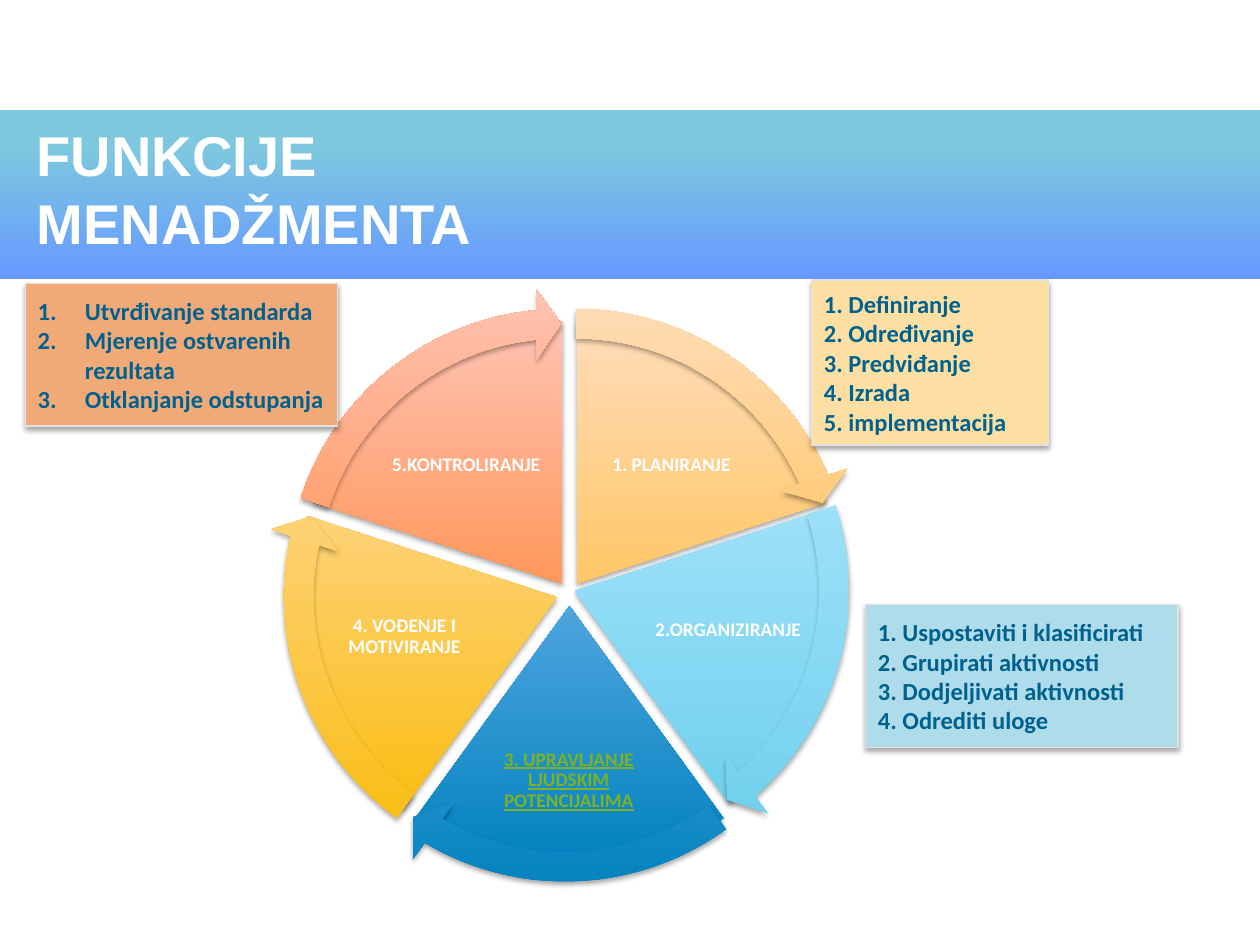
from lxml import etree
from pptx import Presentation
from pptx import util as u
from pptx.dml import color as c
from pptx.enum import shapes, text
from pptx.oxml import ns

THEME = {
    "heading_font": "Arial", "body_font": "Calibri",
    "heading_size": 32, "label_size": 11, "list_size": 14,
    "white": "FFFFFF", "ink": "00618E", "accent": "7EB220", "border": "E1E1E1",
    "band": ((0.21, "7DC8DF"), (1, "6699FF")),
}

HEADING = "FUNKCIJE MENADŽMENTA"
HEADING_BOX = (13.7, 65.5, 360.7, 44.6)
BAND_BOX = (0, 62.8, 720, 96.8)

PIE_SIZE, ARROW_SIZE = 299.5, 336.2
FUNCTIONS = [
    {"label": "1. PLANIRANJE", "colours": ("FFB112", "FFDCBA"), "pie": (180, 183.6),
     "arrow": (161.3, 164.9), "label_box": (335.5, 234, 96.5, 64.1)},
    {"label": "2.ORGANIZIRANJE", "colours": ("69CDEC", "BAEBFF"), "pie": (178.6, 187.9),
     "arrow": (160.6, 169.2), "label_box": (371.5, 324.7, 89.3, 71.3)},
    {"label": "3. UPRAVLJANJE LJUDSKIM POTENCIJALIMA", "colours": ("0081BE", "9FC9FF"),
     "pie": (175.7, 196.6), "arrow": (154.8, 179.3),
     "label_box": (282.2, 406.8, 85.7, 78.5), "marked": True},
    {"label": "4. VOĐENJE I MOTIVIRANJE", "colours": ("FAB900", "FFE0BA"), "pie": (168.5, 191.5),
     "arrow": (150.5, 172.8), "label_box": (186.5, 328.3, 89.3, 71.3)},
    {"label": "5.KONTROLIRANJE", "colours": ("FF6D04", "FFC2B2"), "pie": (171.4, 183.6),
     "arrow": (152.6, 164.9), "label_box": (218.2, 234, 96.5, 64.1)},
]

TASKS = [
    {"box": (463.7, 160, 135.4, 94.3), "fill": "FDDFA3", "numbered": False,
     "lines": ["1. Definiranje", "2. Određivanje", "3. Predviđanje", "4. Izrada",
               "5. implementacija"]},
    {"box": (494.6, 345.6, 178.6, 81.4), "fill": "AEDCEB", "numbered": False,
     "lines": ["1. Uspostaviti i klasificirati", "2. Grupirati aktivnosti",
               "3. Dodjeljivati aktivnosti", "4. Odrediti uloge"]},
    {"box": (14.4, 162, 178.6, 81.4), "fill": "F1AA77", "numbered": True,
     "lines": ["Utvrđivanje standarda", "Mjerenje ostvarenih rezultata",
               "Otklanjanje odstupanja"]},
]


def rgb(value):
    return c.RGBColor.from_string(value)


def points(box):
    return [u.Pt(length) for length in box]


def write(shape, lines, font=THEME["body_font"], size=THEME["label_size"],
          colour=THEME["white"], align=text.PP_ALIGN.LEFT, anchor=text.MSO_ANCHOR.MIDDLE,
          underline=None, spacing=None, inset=None, numbered=False):
    frame = shape.text_frame
    frame.word_wrap = True
    frame.auto_size = text.MSO_AUTO_SIZE.NONE
    frame.vertical_anchor = anchor
    if inset is not None:
        frame.margin_left = frame.margin_right = u.Pt(inset)
        frame.margin_top = frame.margin_bottom = u.Pt(inset)
    for index, line in enumerate(lines):
        paragraph = frame.add_paragraph() if index else frame.paragraphs[0]
        paragraph.alignment = align
        if spacing:
            paragraph.line_spacing = spacing
        if numbered:
            layout = paragraph._p.get_or_add_pPr()
            layout.set("marL", str(u.Pt(27)))
            layout.set("indent", str(-u.Pt(27)))
            etree.SubElement(layout, ns.qn("a:buAutoNum"), type="arabicPeriod")
        run = paragraph.add_run()
        run.text = line
        run.font.name, run.font.size = font, u.Pt(size)
        run.font.bold, run.font.underline = True, underline
        run.font.color.rgb = rgb(colour)


def blend(shape, stops, angle):
    shape.fill.gradient()
    shape.fill.gradient_angle = angle
    for stop, (position, colour) in zip(shape.fill.gradient_stops, stops):
        stop.position = position
        stop.color.rgb = rgb(colour)


def draw(parent, preset, box, adjustments=(), shadow=True):
    shape = parent.shapes.add_shape(preset, *points(box))
    for index, value in enumerate(adjustments):
        shape.adjustments[index] = value
    shape.line.fill.background()
    shape.shadow.inherit = False
    if shadow:
        effects = shape._element.spPr.find(ns.qn("a:effectLst"))
        outer = etree.SubElement(effects, ns.qn("a:outerShdw"), blurRad=str(u.Pt(3.1)),
                                 dist=str(u.Pt(1.8)), dir="5400000", rotWithShape="0")
        tone = etree.SubElement(outer, ns.qn("a:srgbClr"), val="000000")
        etree.SubElement(tone, ns.qn("a:alpha"), val="35000")
    return shape


def turn(step):
    return (270 + 72 * step) % 360 * 0.6


def add_heading(slide):
    band = draw(slide, shapes.MSO_SHAPE.RECTANGLE, BAND_BOX, shadow=False)
    blend(band, THEME["band"], 270)
    heading = slide.shapes.title
    heading._element.addprevious(band._element)
    heading.left, heading.top, heading.width, heading.height = points(HEADING_BOX)
    write(heading, [HEADING], font=THEME["heading_font"], size=THEME["heading_size"],
          anchor=text.MSO_ANCHOR.TOP)


def add_wheel(slide):
    wheel = slide.shapes.add_group_shape()
    for step, function in enumerate(FUNCTIONS):
        pie = draw(wheel, shapes.MSO_SHAPE.PIE, (*function["pie"], PIE_SIZE, PIE_SIZE),
                   (turn(step), turn(step + 1)))
        blend(pie, enumerate(function["colours"]), 90)
        marked = function.get("marked")
        label = wheel.shapes.add_textbox(*points(function["label_box"]))
        write(label, [function["label"]], align=text.PP_ALIGN.CENTER, spacing=0.9, inset=1.4,
              colour=THEME["accent" if marked else "white"], underline=marked)
    for step, function in enumerate(FUNCTIONS):
        arrow = draw(wheel, shapes.MSO_SHAPE.CIRCULAR_ARROW,
                     (*function["arrow"], ARROW_SIZE, ARROW_SIZE),
                     (0.05, 3.28, turn(step + 1) - 3.28, turn(step), 0.06))
        blend(arrow, enumerate(function["colours"]), 90)


def add_tasks(slide):
    for task in TASKS:
        card = draw(slide, shapes.MSO_SHAPE.FLOWCHART_PROCESS, task["box"])
        card.fill.solid()
        card.fill.fore_color.rgb = rgb(task["fill"])
        card.line.color.rgb = rgb(THEME["border"])
        card.line.width = u.Pt(0.75)
        write(card, task["lines"], size=THEME["list_size"], colour=THEME["ink"],
              numbered=task["numbered"])


def main():
    deck = Presentation()
    deck.slide_width, deck.slide_height = u.Pt(720), u.Pt(540)
    slide = deck.slides.add_slide(deck.slide_layouts[5])
    add_heading(slide)
    add_wheel(slide)
    add_tasks(slide)
    deck.save("out.pptx")


if __name__ == "__main__":
    main()
